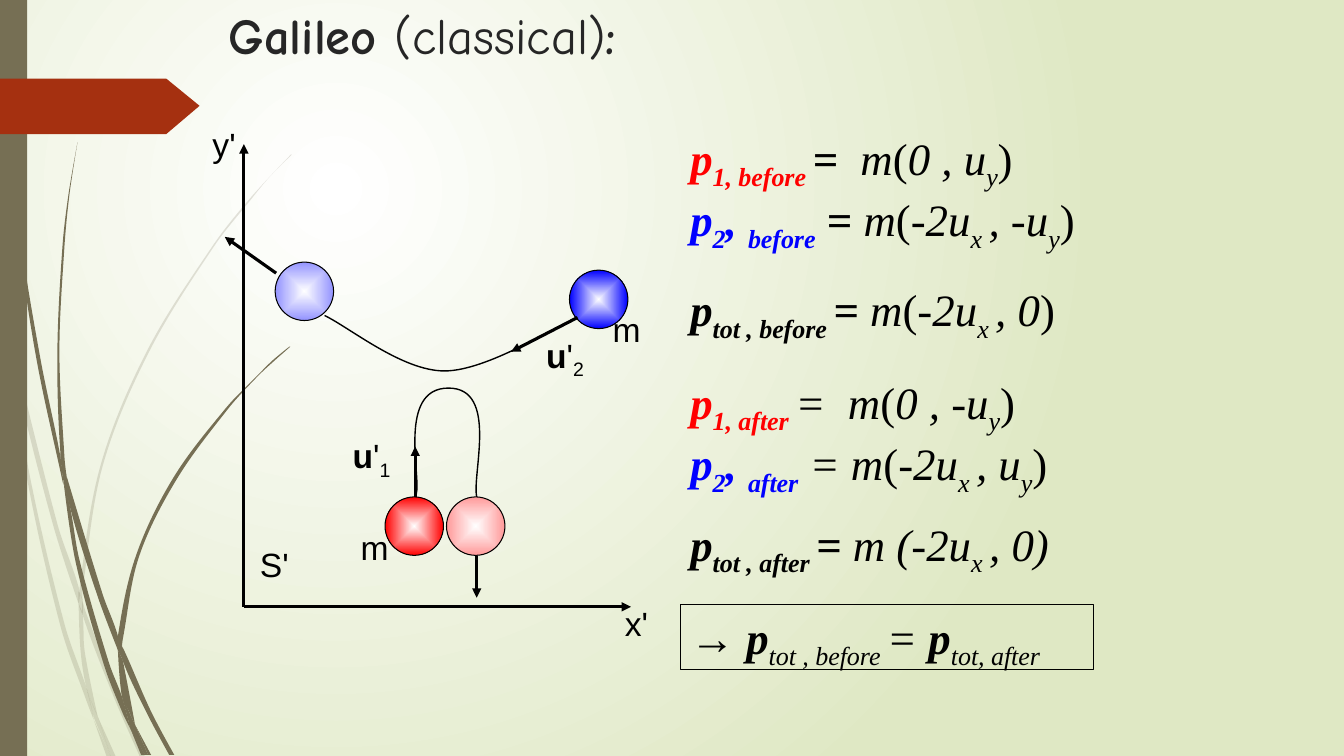
from lxml import etree
from pptx import Presentation
from pptx.dml.color import RGBColor
from pptx.enum.shapes import MSO_CONNECTOR, MSO_SHAPE
from pptx.enum.text import MSO_ANCHOR, MSO_AUTO_SIZE, PP_ALIGN
from pptx.oxml import parse_xml
from pptx.oxml.ns import nsdecls, qn
from pptx.util import Cm, Pt

RECT, OVAL, STRAIGHT = MSO_SHAPE.RECTANGLE, MSO_SHAPE.OVAL, MSO_CONNECTOR.STRAIGHT
TOP, LEFT = MSO_ANCHOR.TOP, PP_ALIGN.LEFT
FIT, NO_FIT = MSO_AUTO_SIZE.SHAPE_TO_FIT_TEXT, MSO_AUTO_SIZE.NONE
GRID = 2.54  # all positions below count in grid steps of 2.54 cm
OLIVE, RUST, BLACK, WHITE = "766F54", "A53010", "000000", "FFFFFF"

# Run styles: b bold, i italic, _ subscript, R red, B blue
TITLE = [("Galileo ", "b"), ("(classical)", ""), (":", "b")]
X_COMP = [("-2u", "i"), ("x ", "i_")]
Y_END = [("y", "i_"), (")", "")]
TOTAL_P = ("p", "bi")


def first(when, equals, mass, velocity):
    return [("p", "biR"), (f"1, {when} ", "bi_R"), *equals, (mass, "i"),
            ("(", ""), (velocity, "i"), *Y_END]


def second(when, equals, mass, velocity):
    return [("p", "biB"), ("2", "bi_B"), (", ", "biB"), (when, "bi_B"),
            *equals, (mass, "i"), ("(", ""), *X_COMP, (velocity, "i"), *Y_END]


# Equations: left, top, width, height, lines
EQUATIONS = [
    (6.75, 1.25, 4.28, 1.18, [first("before", [("=  ", "bi")], "m", "0 , u"),
                              second("before", [(" = ", "bi")], "m", ", -u")]),
    (6.75, 3.67, 3.92, 1.18, [first("after", [], "=  m", "0 , -u"),
                              second("after", [], " = m", ", u")]),
    (6.75, 2.75, 4.21, 0.64, [[TOTAL_P, ("tot , before ", "bi_"), ("= ", "bi"),
                               ("m", "i"), ("(", ""), *X_COMP, (", 0", "i"), (")", "")]]),
    (6.75, 5.08, 3.98, 0.64, [[TOTAL_P, ("tot , after ", "bi_"), ("= ", "bi"),
                               ("m (", "i"), *X_COMP, (", 0)", "i")]]),
]
CONCLUSION = [("→ ", ""), TOTAL_P, ("tot , before ", "i_"), ("= ", "i"),
              TOTAL_P, ("tot, after", "i_")]

# Diagram; a track is a start followed by two handles and an end per curve
BALL = 0.58
BALLS = [(3.82, 4.93, "FF0000"), (4.43, 4.93, "FF9999"),
         (5.65, 2.68, "0000FF"), (2.73, 2.6, "9393FF")]
ARROWS = [(4.12, 4.93, 4.12, 4.43), (4.73, 5.52, 4.73, 5.93),
          (5.73, 3.15, 5.07, 3.49), (2.74, 2.71, 2.23, 2.35),
          (2.42, 6.02, 6.26, 6.02), (2.42, 6.02, 2.42, 1.43)]
TRACKS = [[(4.13, 4.9), (4.18, 4.73), (3.94, 3.85), (4.45, 3.85),
           (4.95, 3.85), (4.68, 4.71), (4.73, 4.93)],
          [(5.73, 3.15), (5.51, 3.24), (4.83, 3.68), (4.41, 3.68),
           (3.99, 3.68), (3.47, 3.25), (3.22, 3.13)]]
LABELS = [
    (2.01, 1.18, 0.44, [("y'", "")]), (6.01, 5.93, 0.53, [(" x'", "")]),
    (3.4, 4.27, 0.6, [("u", "b"), ("'", ""), ("1", "_")]),
    (5.32, 3.27, 0.6, [("u", "b"), ("'", ""), ("2", "_")]),
    (3.48, 5.18, 0.48, [("m", "")]), (5.98, 3.02, 0.48, [("m", "")]),
    (2.48, 5.35, 0.49, [("S'", "")]),
]

# Corner points of the marker and of the grass blades
MARKER = [(1.98, 1.05), (1.65, 1.33), (0, 1.33), (0, 0.78), (1.65, 0.78)]
PALE_BLADES = [
    [(0.1, 3.5), (0.08, 3.22), (0, 2.82), (0, 2.99), (0.09, 3.44)],
    [(0.53, 5.22), (0.78, 5.99), (0.79, 5.86), (0.57, 5.2), (0.13, 3.45), (0.16, 3.76)],
    [(0.85, 6.07), (0.82, 5.96), (0.82, 6.1), (1.14, 6.94), (1.39, 7.51), (1.44, 7.51), (1.18, 6.92)],
    [(1.1, 7.51), (1.15, 7.51), (0.97, 7.11)],
    [(0.86, 6.83), (0.64, 6.19), (0.29, 4.69), (0.16, 3.76), (0.1, 3.5), (0.26, 4.7),
     (0.6, 6.21), (0.85, 6.93), (0.93, 7.14), (0.92, 7.07)],
    [(0.78, 5.99), (0.8, 6.46), (0.86, 6.83), (0.97, 7.11), (0.84, 6.46), (0.82, 6.1)],
    [(0.82, 5.84), (1.02, 4.62), (1.48, 3.49), (2.12, 2.45), (2.49, 1.98), (2.68, 1.75), (2.89, 1.54),
     (2.89, 1.53), (2.48, 1.97), (2.11, 2.44), (1.46, 3.48), (1, 4.61), (0.79, 5.84), (0.82, 5.96)],
    [(0.93, 7.14), (1.06, 7.51), (1.1, 7.51)],
    [(0.82, 6.1), (0.82, 5.96), (0.78, 5.86), (0.78, 5.99)],
    [(0.89, 6.92), (0.86, 6.83), (0.92, 7.07), (0.94, 7.14), (1.1, 7.51), (0.97, 7.11)],
]
DARK_BLADES = [
    [(0.07, 1.1), (0.18, 2.33), (0.36, 3.55), (0.62, 4.77), (0.63, 4.81), (0.6, 4.53), (0.4, 3.55),
     (0.2, 2.32), (0.08, 1.09), (0.05, 0.48), (0.04, 0), (0.03, 0), (0.04, 0.48)],
    [(0.97, 5.92), (1.17, 6.45), (1.17, 6.31), (1.02, 5.9), (0.66, 4.72), (0.7, 5.05)],
    [(1.25, 6.49), (1.21, 6.41), (1.22, 6.56), (1.46, 7.08), (1.68, 7.49), (1.73, 7.49), (1.5, 7.06)],
    [(1.21, 6.91), (1.08, 6.57), (0.79, 5.56), (0.7, 5.05), (0.63, 4.77), (0.75, 5.57),
     (1.03, 6.59), (1.22, 7.08), (1.29, 7.22), (1.28, 7.17)],
    [(0.66, 4.72), (0.64, 4.53), (0.59, 3.49), (0.64, 2.45), (0.69, 1.93), (0.77, 1.41),
     (0.68, 1.93), (0.62, 2.45), (0.57, 3.49), (0.6, 4.49)],
    [(1.47, 7.49), (1.5, 7.49), (1.34, 7.19)],
    [(0.63, 4.77), (0.7, 5.05), (0.66, 4.72), (0.6, 4.49), (0.6, 4.53)],
    [(1.22, 6.33), (1.38, 5.52), (1.75, 4.76), (2.26, 4.06), (2.55, 3.74), (2.71, 3.59), (2.88, 3.44),
     (2.87, 3.44), (2.7, 3.58), (2.55, 3.73), (2.24, 4.05), (1.72, 4.74), (1.35, 5.51), (1.17, 6.31), (1.21, 6.41)],
    [(1.29, 7.22), (1.4, 7.49), (1.44, 7.49)],
    [(1.17, 6.45), (1.21, 6.91), (1.28, 7.06), (1.34, 7.19), (1.22, 6.56), (1.2, 6.51)],
    [(1.17, 6.45), (1.2, 6.51), (1.22, 6.56), (1.21, 6.41), (1.17, 6.31)],
    [(1.28, 7.06), (1.21, 6.91), (1.28, 7.17), (1.29, 7.22), (1.44, 7.49), (1.47, 7.49), (1.34, 7.19)],
]


def rgb(color):
    return RGBColor.from_string(color)


def grid(*steps):
    return [Cm(GRID * n) for n in steps]


def rounded(corners):
    """Closed curve through the corners: smooth where it bends, sharp at tips."""
    pts = [complex(*c) for c in corners]
    after = pts[1:] + pts[:1]
    dirs = []
    for a, b in zip([p - q for p, q in zip(pts, pts[-1:] + pts)],
                    [q - p for p, q in zip(pts, after)]):
        sharp = (a * b.conjugate()).real < 0.8 * abs(a) * abs(b)
        dirs.append(0 if sharp else (a + b) / abs(a + b))
    curve = pts[:1]
    for p, q, d, e in zip(pts, after, dirs, dirs[1:] + dirs[:1]):
        reach = abs(q - p) / 3
        curve += [p + d * reach, q - e * reach, q]
    return [(c.real, c.imag) for c in curve]


def outline(points, close=True):
    points = [grid(*p) for p in points]
    builder = s.shapes.build_freeform(*points[0], scale=1.0)
    builder.add_line_segments(points[1:], close=close)
    sp = builder.convert_to_shape()
    lines = sp.element.findall(".//" + qn("a:lnTo"))[:len(points) - 1]
    for trio in zip(lines[::3], lines[1::3], lines[2::3]):
        curve = etree.Element(qn("a:cubicBezTo"))
        trio[0].addprevious(curve)
        for line in trio:
            curve.append(line[0])
            line.getparent().remove(line)
    return sp


def radial(parent, outer, kind, to):
    """Swap the solid fill in parent for a gradient from white to outer."""
    rect = " ".join(f'{side}="{n}000"' for side, n in zip("ltrb", to))
    stops = "".join(f'<a:gs pos="{pos}"><a:srgbClr val="{c}"/></a:gs>'
                    for pos, c in ((0, WHITE), (100000, outer)))
    parent.replace(parent.find(qn("a:solidFill")), parse_xml(
        f'<a:gradFill {nsdecls("a")} rotWithShape="1"><a:gsLst>{stops}</a:gsLst>'
        f'<a:path path="{kind}"><a:fillToRect {rect}/></a:path></a:gradFill>'))


def paint(sp, fill=None, line=None, width=0.75):
    sp.shadow.inherit = False
    for part, color in ((sp.fill, fill), (sp.line.fill, line)):
        if color:
            part.solid()
            part.fore_color.rgb = rgb(color)
        else:
            part.background()
    if line:
        sp.line.width = Pt(width)
    return sp


def write(sp, lines, font, size, color=BLACK, fit=FIT, wrap=False):
    tf = sp.text_frame
    tf.word_wrap, tf.auto_size, tf.vertical_anchor = wrap, fit, TOP
    for n, runs in enumerate(lines):
        p = tf.add_paragraph() if n else tf.paragraphs[0]
        p.alignment, p.font.name, p.font.size = LEFT, font, Pt(size)
        for text, style in runs:
            r = p.add_run()
            r.text = text
            r.font.bold, r.font.italic = "b" in style, "i" in style
            r.font.color.rgb = rgb("FF0000" if "R" in style else "0000FF" if "B" in style else color)
            if "_" in style:
                r.font._element.set("baseline", "-25000")


prs = Presentation()
prs.slide_width, prs.slide_height = Cm(33.87), Cm(19.05)
s = prs.slides.add_slide(prs.slide_layouts[5])
# Background, grass, side bar and marker
s.background.fill.solid()
radial(s.element.find(".//" + qn("p:bgPr")), "DFE8C4", "circle", (50, 50, 100, 100))
for opacity, blades in ((20, PALE_BLADES), (100, DARK_BLADES)):
    for blade in blades:
        sp = paint(outline(rounded(blade)), OLIVE)
        tint = etree.SubElement(sp.element.spPr.find(".//" + qn("a:srgbClr")), qn("a:alpha"))
        tint.set("val", str(opacity * 1000))
paint(s.shapes.add_shape(RECT, *grid(0, 0, 0.27, 7.5)), OLIVE)
paint(outline(rounded(MARKER)), RUST)
# Title and equations
title = s.shapes.title
title.left, title.top, title.width, title.height = grid(2.17, -0.01, 9, 1.25)
write(title, [TITLE], "Comic Neue", 36, "262626", NO_FIT, True)
for *box, lines in EQUATIONS:
    write(s.shapes.add_textbox(*grid(*box)), lines, "Times New Roman", 32)
frame = paint(s.shapes.add_shape(RECT, *grid(6.75, 6, 4.1, 0.64)), line=BLACK)
write(frame, [CONCLUSION], "Times New Roman", 32)
# Collision diagram
for track in TRACKS:
    paint(outline(track, False), line=BLACK, width=1)
for x, y, color in BALLS:
    sp = paint(s.shapes.add_shape(OVAL, *grid(x, y, BALL, BALL)), color, BLACK)
    radial(sp.element.spPr, color, "shape", (50, 50, 50, 50))
for ends in ARROWS:
    arrow = s.shapes.add_connector(STRAIGHT, *grid(*ends))
    arrow.line.color.rgb, arrow.line.width = rgb(BLACK), Pt(2.25)
    etree.SubElement(arrow.line._get_or_add_ln(), qn("a:tailEnd")).set("type", "triangle")
    etree.SubElement(arrow._element.spPr, qn("a:effectLst"))
for x, y, width, runs in LABELS:
    write(s.shapes.add_textbox(*grid(x, y, width, 0.51)), [runs], "Arial", 24)
prs.save("out.pptx")
